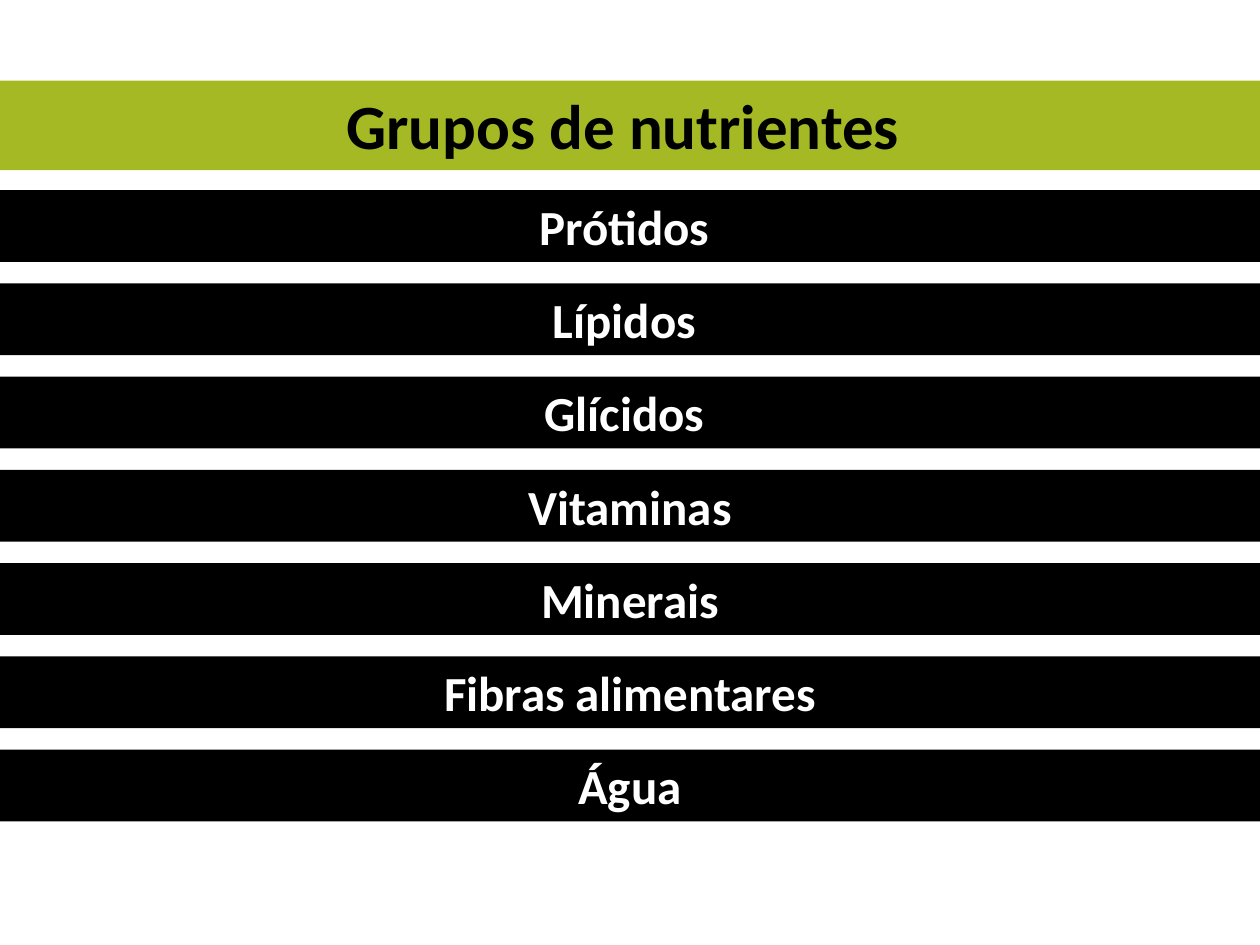
"""Build a slide listing the nutrient groups as full-width bands."""
import pptx
import pptx.dml.color
import pptx.enum.shapes
import pptx.enum.text
import pptx.util
from pptx.util import Inches

TITLE = "Grupos de nutrientes "
NUTRIENTS = ["Prótidos ", "Lípidos ", "Glícidos ", "Vitaminas",
             "Minerais", "Fibras alimentares", "Água"]
WIDTH, HEIGHT = 10, 7.5
TITLE_TOP, TITLE_HEIGHT = 0.64, 0.71
FIRST_TOP, BAND_HEIGHT, BAND_STEP = 1.51, 0.57, 0.74


def color(value):
    return pptx.dml.color.RGBColor.from_string(value)


def add_band(page, text, *, top, height, size=28, fill="000000", ink="FFFFFF"):
    box = page.shapes.add_shape(
        pptx.enum.shapes.MSO_SHAPE.RECTANGLE,
        Inches(0), Inches(top), Inches(WIDTH), Inches(height))
    box.shadow.inherit = False
    box.fill.solid()
    box.fill.fore_color.rgb = color(fill)
    box.line.fill.background()
    frame = box.text_frame
    frame.word_wrap = True
    frame.auto_size = pptx.enum.text.MSO_AUTO_SIZE.SHAPE_TO_FIT_TEXT
    frame.vertical_anchor = pptx.enum.text.MSO_ANCHOR.TOP
    para = frame.paragraphs[0]
    para.alignment = pptx.enum.text.PP_ALIGN.CENTER
    span = para.add_run()
    span.text = text
    span.font.name = "Calibri"
    span.font.size = pptx.util.Pt(size)
    span.font.bold = True
    span.font.color.rgb = color(ink)


def main():
    deck = pptx.Presentation()
    deck.slide_width, deck.slide_height = Inches(WIDTH), Inches(HEIGHT)
    page = deck.slides.add_slide(deck.slide_layouts[6])
    add_band(page, TITLE, top=TITLE_TOP, height=TITLE_HEIGHT,
             size=36, fill="A4B924", ink="000000")
    for index, nutrient in enumerate(NUTRIENTS):
        add_band(page, nutrient, top=FIRST_TOP + index * BAND_STEP, height=BAND_HEIGHT)
    deck.save("out.pptx")


if __name__ == "__main__":
    main()
